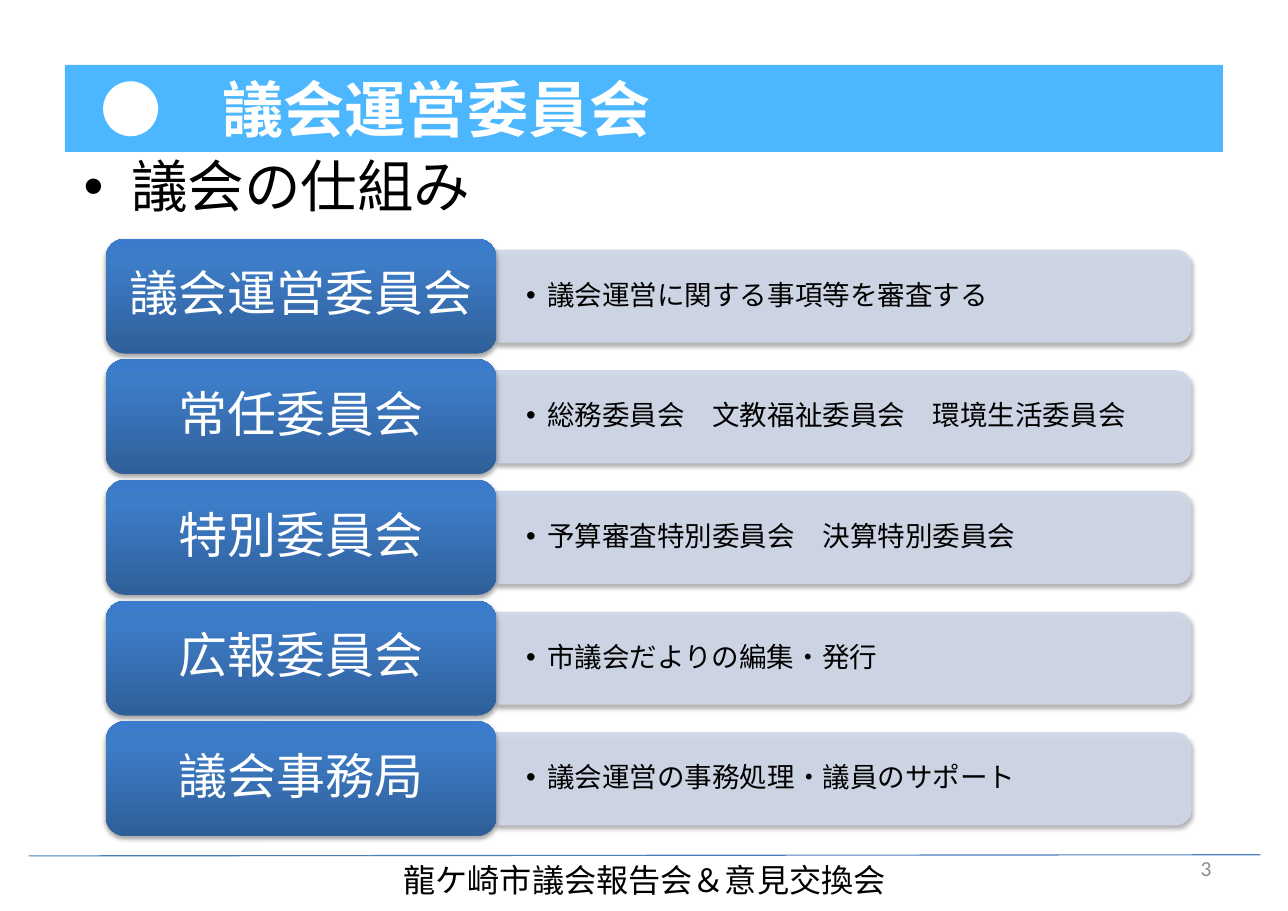
from collections import namedtuple

from lxml import etree
from pptx import Presentation
from pptx.dml.color import RGBColor
from pptx.enum.shapes import MSO_CONNECTOR, MSO_SHAPE
from pptx.enum.text import MSO_ANCHOR, PP_ALIGN
from pptx.oxml import parse_xml
from pptx.oxml.ns import nsdecls, qn
from pptx.util import Emu, Inches, Pt

RECTANGLE = MSO_SHAPE.RECTANGLE
ROUNDED = MSO_SHAPE.ROUNDED_RECTANGLE
ROUNDED_TOP = MSO_SHAPE.ROUND_2_SAME_RECTANGLE
STRAIGHT = MSO_CONNECTOR.STRAIGHT
TOP, MIDDLE = MSO_ANCHOR.TOP, MSO_ANCHOR.MIDDLE
LEFT, CENTER, RIGHT = PP_ALIGN.LEFT, PP_ALIGN.CENTER, PP_ALIGN.RIGHT

PAGE_WIDTH, PAGE_HEIGHT = Inches(11.69), Inches(8.27)
Box = namedtuple("Box", "left top width height")
Style = namedtuple("Style", "size color font bold", defaults=(False,))


class Theme:
    japanese, latin = "Noto Sans CJK JP", "Calibri"
    band, rule, bar = "0099FF", "4B7EBC", "D0D8E8"
    label_stops = [(0, "2F5F99"), (80, "3D7CC7"), (100, "3A7CCB")]
    title = Style(40, "FFFFFF", japanese, True)
    heading = Style(37, "000000", latin)
    label = Style(32, "FFFFFF", japanese)
    detail = Style(18, "000000", japanese)
    footer = Style(21, "000000", japanese)
    number = Style(14, "8C8C8C", latin)


COMMITTEES = [
    ("議会運営委員会", "議会運営に関する事項等を審査する"),
    ("常任委員会", "総務委員会　文教福祉委員会　環境生活委員会"),
    ("特別委員会", "予算審査特別委員会　決算特別委員会"),
    ("広報委員会", "市議会だよりの編集・発行"),
    ("議会事務局", "議会運営の事務処理・議員のサポート"),
]


def share(left, top, width, height):
    """Box given in percent of the page."""
    return Box(*(Emu(round(part * side / 100)) for part, side in zip(
        (left, top, width, height), (PAGE_WIDTH, PAGE_HEIGHT) * 2)))


def part_of(box, left, top, width, height):
    """Box given as shares of another box."""
    return Box(Emu(round(box.left + left * box.width)),
               Emu(round(box.top + top * box.height)),
               Emu(round(width * box.width)), Emu(round(height * box.height)))


def write(shape, text, style, align=LEFT, anchor=MIDDLE, margins=(0.11, 0.06),
          spacing=1.0, bullet_indent=None):
    frame = shape.text_frame
    frame.word_wrap = True
    frame.vertical_anchor = anchor
    frame.margin_left = frame.margin_right = Inches(margins[0])
    frame.margin_top = frame.margin_bottom = Inches(margins[1])
    para = frame.paragraphs[0]
    para.text = text
    para.alignment = align
    para.line_spacing = spacing
    if bullet_indent:
        props = para._p.get_or_add_pPr()
        props.set("marL", str(Inches(bullet_indent)))
        props.set("indent", str(-Inches(bullet_indent)))
        etree.SubElement(props, qn("a:buFont"), typeface="Arial")
        etree.SubElement(props, qn("a:buChar"), char="•")
    span = para.runs[0]
    span.font.size = Pt(style.size)
    span.font.bold = style.bold
    span.font.name = style.font
    span.font.color.rgb = RGBColor.from_string(style.color)
    etree.SubElement(span.font._element, qn("a:ea"), typeface=Theme.japanese)


def add_plain_shape(page, kind, box, color):
    shape = page.shapes.add_shape(kind, *box)
    shape.shadow.inherit = False
    shape.fill.solid()
    shape.fill.fore_color.rgb = RGBColor.from_string(color)
    shape.line.fill.background()
    return shape


def set_opacity(shape, percent):
    for color in shape.element.spPr.iter(qn("a:srgbClr")):
        etree.SubElement(color, qn("a:alpha"), val=str(percent * 1000))


def add_soft_shadow(shape):
    effects = shape.element.spPr.find(qn("a:effectLst"))
    effects.append(parse_xml(
        f'<a:outerShdw {nsdecls("a")} blurRad="{Pt(3.1)}" dist="{Pt(1.8)}" '
        'dir="5400000" rotWithShape="0"><a:srgbClr val="000000">'
        '<a:alpha val="35000"/></a:srgbClr></a:outerShdw>'))


def set_upward_gradient(shape, stops):
    marks = "".join(f'<a:gs pos="{place * 1000}"><a:srgbClr val="{color}"/></a:gs>'
                    for place, color in stops)
    gradient = parse_xml(
        f'<a:gradFill {nsdecls("a")} rotWithShape="1"><a:gsLst>{marks}</a:gsLst>'
        '<a:lin ang="16200000" scaled="0"/></a:gradFill>')
    props = shape.element.spPr
    props.replace(props.find(qn("a:solidFill")), gradient)


def add_title_band(page, box):
    band = add_plain_shape(page, RECTANGLE, box, Theme.band)
    set_opacity(band, 70)
    title = page.shapes.add_textbox(*part_of(box, 0.02, 0, 0.96, 1))
    write(title, "●　議会運営委員会", Theme.title)


def add_heading(page, box):
    heading = page.shapes.add_textbox(*box)
    write(heading, "議会の仕組み", Theme.heading, anchor=TOP, spacing=0.9,
          bullet_indent=0.43)


def add_committee_row(page, box, name, duty):
    # Bar lies on its side, so its rounded top faces right
    area = part_of(box, 0.36, 0.1, 0.64, 0.8)
    upright = Box(area.left + (area.width - area.height) // 2,
                  area.top + (area.height - area.width) // 2,
                  area.height, area.width)
    bar = add_plain_shape(page, ROUNDED_TOP, upright, Theme.bar)
    bar.rotation = 90
    bar.line.color.rgb = RGBColor.from_string(Theme.bar)
    bar.line.width = Pt(0.75)
    set_opacity(bar, 90)
    add_soft_shadow(bar)
    detail = page.shapes.add_textbox(*area)
    write(detail, duty, Theme.detail, margins=(0.27, 0.14), spacing=0.9,
          bullet_indent=0.19)
    # Name label
    label = add_plain_shape(page, ROUNDED, part_of(box, 0, 0, 0.36, 1), Theme.bar)
    set_upward_gradient(label, Theme.label_stops)
    add_soft_shadow(label)
    write(label, name, Theme.label, CENTER, margins=(0.13, 0.07), spacing=0.9)


def add_committee_list(page, box):
    gap = 0.05  # share of a row's height
    row_height = 1 / (len(COMMITTEES) + gap * (len(COMMITTEES) - 1))
    for index, (name, duty) in enumerate(COMMITTEES):
        row = part_of(box, 0, index * row_height * (1 + gap), 1, row_height)
        add_committee_row(page, row, name, duty)


def add_footer(page, box):
    rule = page.shapes.add_connector(
        STRAIGHT, box.left, box.top + Inches(0.01), box.left + box.width, box.top)
    rule.line.color.rgb = RGBColor.from_string(Theme.rule)
    rule.line.width = Pt(0.75)
    etree.SubElement(rule.element.spPr, qn("a:effectLst"))
    caption = page.shapes.add_textbox(*part_of(box, 0.24, 0, 0.52, 1))
    write(caption, "龍ケ崎市議会報告会＆意見交換会", Theme.footer, CENTER, TOP,
          margins=(0.1, 0.05))
    number = page.shapes.add_textbox(*part_of(box, 0.73, -0.21, 0.24, 0.94))
    write(number, "3", Theme.number, RIGHT)


def main():
    deck = Presentation()
    deck.slide_width, deck.slide_height = PAGE_WIDTH, PAGE_HEIGHT
    page = deck.slides.add_slide(deck.slide_layouts[6])
    add_title_band(page, share(5.05, 7.13, 89.9, 9.55))
    add_heading(page, share(5.56, 16.7, 42.4, 8.6))
    add_committee_list(page, share(8.21, 26.2, 84.26, 65.6))
    add_footer(page, share(2.22, 93.83, 95.64, 5.7))
    deck.save("out.pptx")


if __name__ == "__main__":
    main()
